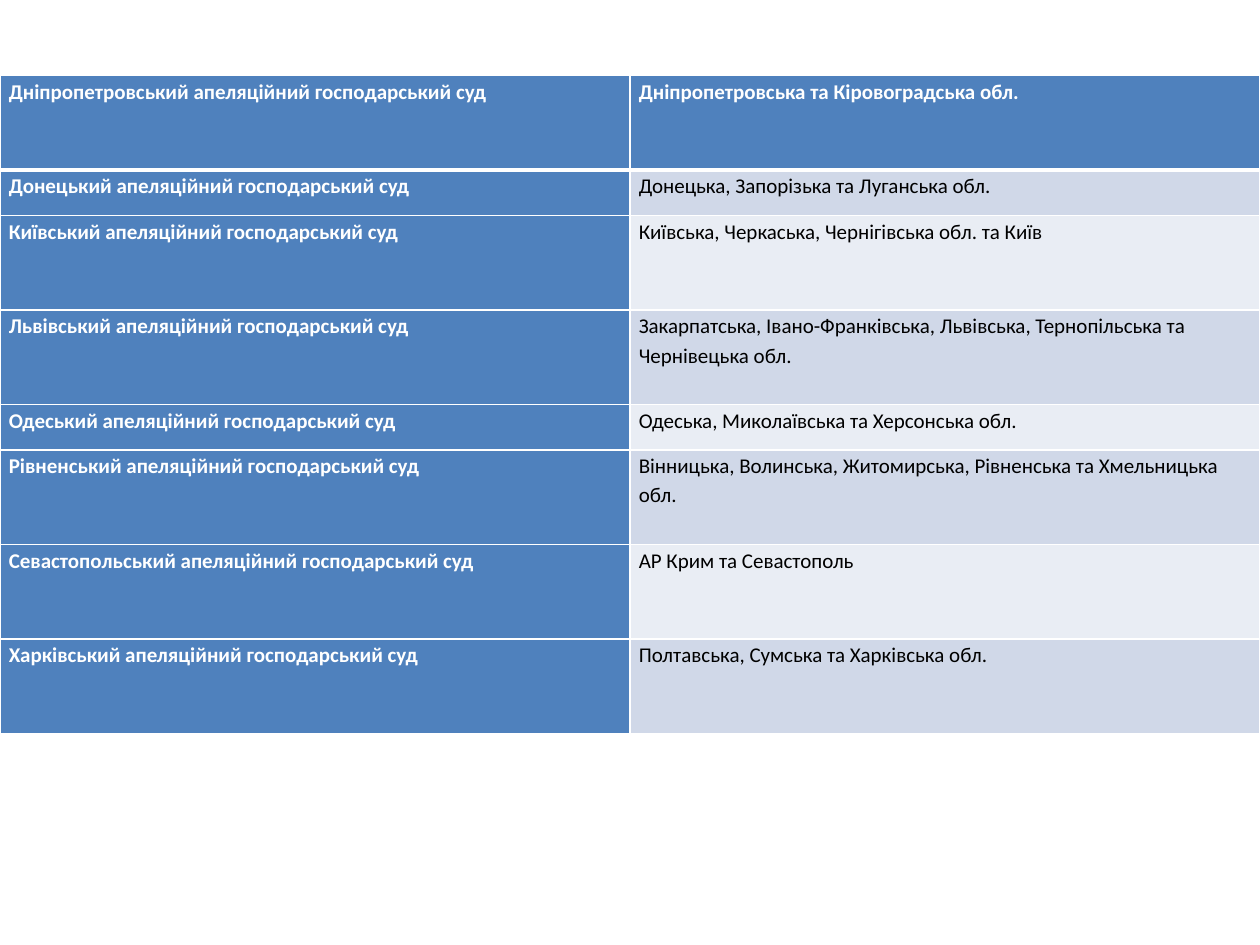
from dataclasses import dataclass

from lxml import etree
from pptx import Presentation
from pptx.dml.color import RGBColor
from pptx.oxml.ns import qn
from pptx.util import Inches, Pt

BLANK_LAYOUT = 6


@dataclass(frozen=True)
class Theme:
    font: str = "Calibri"
    text_size: float = 12
    line_spacing: float = 1.15
    accent: str = "4F81BD"
    bands: tuple = ("E9EDF4", "D0D8E8")
    on_accent: str = "FFFFFF"
    on_band: str = "000000"
    border: str = "FFFFFF"
    border_width: float = 1
    header_rule_width: float = 3


THEME = Theme()
TALL, SHORT = 0.75, 0.36

# Court, regions it serves, row height
COURTS = [
    ("Дніпропетровський апеляційний господарський суд",
     "Дніпропетровська та Кіровоградська обл.", TALL),
    ("Донецький апеляційний господарський суд",
     "Донецька, Запорізька та Луганська обл.", SHORT),
    ("Київський апеляційний господарський суд",
     "Київська, Черкаська, Чернігівська обл. та Київ", TALL),
    ("Львівський апеляційний господарський суд",
     "Закарпатська, Івано-Франківська, Львівська, Тернопільська та Чернівецька обл.", TALL),
    ("Одеський апеляційний господарський суд",
     "Одеська, Миколаївська та Херсонська обл.", SHORT),
    ("Рівненський апеляційний господарський суд",
     "Вінницька, Волинська, Житомирська, Рівненська та Хмельницька обл.", TALL),
    ("Севастопольський апеляційний господарський суд",
     "АР Крим та Севастополь", TALL),
    ("Харківський апеляційний господарський суд",
     "Полтавська, Сумська та Харківська обл.", TALL),
]


def set_borders(cell, top, bottom):
    """Draw the four cell edges; they must come before the fill in the XML."""
    side = THEME.border_width
    properties = cell._tc.get_or_add_tcPr()
    edges = (("L", side), ("R", side), ("T", top), ("B", bottom))
    for position, (edge, width) in enumerate(edges):
        line = etree.Element(qn(f"a:ln{edge}"), w=str(Pt(width)))
        fill = etree.SubElement(line, qn("a:solidFill"))
        etree.SubElement(fill, qn("a:srgbClr"), val=THEME.border)
        properties.insert(position, line)


def fill_cell(cell, text, background, color, bold):
    cell.fill.solid()
    cell.fill.fore_color.rgb = RGBColor.from_string(background)
    cell.margin_left = cell.margin_right = Inches(0.07)
    cell.margin_top = cell.margin_bottom = 0

    cell.text = text
    paragraph = cell.text_frame.paragraphs[0]
    paragraph.line_spacing = THEME.line_spacing
    paragraph.font.name = THEME.font
    paragraph.font.size = Pt(THEME.text_size)
    paragraph.font.bold = bold
    paragraph.font.color.rgb = RGBColor.from_string(color)


def add_courts_table(slide, left, top, width):
    height = Inches(sum(row_height for _, _, row_height in COURTS))
    courts = slide.shapes.add_table(len(COURTS), 2, left, top, width, height).table
    courts.first_col = True
    for column in courts.columns:
        column.width = width // 2

    for index, (court, regions, row_height) in enumerate(COURTS):
        courts.rows[index].height = Inches(row_height)
        rule_above = THEME.header_rule_width if index == 1 else THEME.border_width
        rule_below = THEME.header_rule_width if index == 0 else THEME.border_width
        for column, text in enumerate((court, regions)):
            cell = courts.cell(index, column)
            # The first row and the first column carry the accent
            if index == 0 or column == 0:
                fill_cell(cell, text, THEME.accent, THEME.on_accent, True)
            else:
                fill_cell(cell, text, THEME.bands[index % 2], THEME.on_band, False)
            set_borders(cell, rule_above, rule_below)


def main():
    presentation = Presentation()
    presentation.slide_width = Inches(10)
    presentation.slide_height = Inches(7.5)
    slide = presentation.slides.add_slide(presentation.slide_layouts[BLANK_LAYOUT])
    add_courts_table(slide, Inches(0), Inches(0.6), presentation.slide_width)
    presentation.save("out.pptx")


if __name__ == "__main__":
    main()
